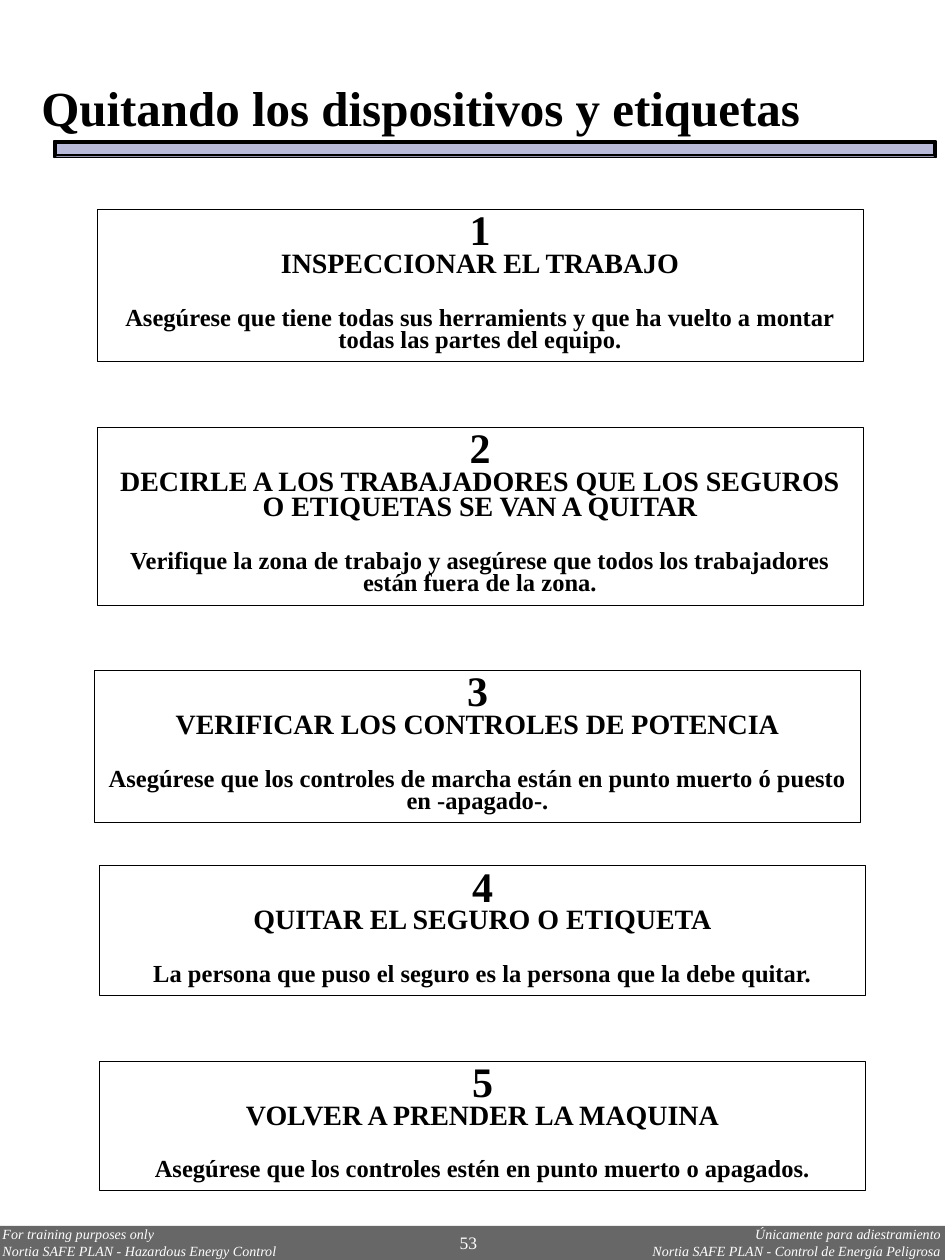
from dataclasses import dataclass

from pptx import Presentation
from pptx.dml.color import RGBColor
from pptx.enum.shapes import MSO_SHAPE
from pptx.enum.text import MSO_ANCHOR, PP_ALIGN
from pptx.util import Inches, Pt

RECTANGLE, BEVEL = MSO_SHAPE.RECTANGLE, MSO_SHAPE.BEVEL
LEFT, CENTER, RIGHT = PP_ALIGN.LEFT, PP_ALIGN.CENTER, PP_ALIGN.RIGHT
TOP = MSO_ANCHOR.TOP
COLUMNS, ROWS = 75, 100
BLANK_LAYOUT = 6


def color(hex_string):
    return RGBColor.from_string(hex_string)


@dataclass
class Page:
    """Style and current slide; lengths are columns and rows of the grid."""
    slide: object
    width: int
    height: int
    font: str = "Times New Roman"
    ink: str = "000000"
    paper: str = "FFFFFF"
    band: str = "676767"
    accent: str = "B9B9D9"

    def place(self, left, top, width, height):
        column, row = self.width / COLUMNS, self.height / ROWS
        return [round(n) for n in (left * column, top * row, width * column, height * row)]

    def set_line(self, paragraph, text, size, ink, align=LEFT, bold=False, italic=False):
        paragraph.text = text
        paragraph.alignment = align
        for run in paragraph.runs:
            font = run.font
            font.name, font.size = self.font, Pt(size)
            font.bold, font.italic = bold, italic
            font.color.rgb = color(ink)

    def shape(self, kind, area, fill=None, line=None):
        shape = self.slide.shapes.add_shape(kind, *self.place(*area))
        shape.shadow.inherit = False
        if fill:
            shape.fill.solid()
            shape.fill.fore_color.rgb = color(fill)
        else:
            shape.fill.background()
        if line:
            shape.line.color.rgb = color(self.ink)
            shape.line.width = Pt(line)
        else:
            shape.line.fill.background()
        return shape

    def text(self, area, lines, size, ink, inset=True, **style):
        frame = self.slide.shapes.add_textbox(*self.place(*area)).text_frame
        frame.word_wrap = True
        if not inset:
            frame.margin_left = frame.margin_right = 0
            frame.margin_top = frame.margin_bottom = 0
        frame.text = "\n".join(lines)
        for paragraph, line in zip(frame.paragraphs, lines):
            self.set_line(paragraph, line, size, ink, **style)
        return frame

    def step(self, area, number, heading, advice):
        frame = self.shape(RECTANGLE, area, line=0.25).text_frame
        frame.word_wrap = True
        frame.vertical_anchor = TOP
        lines = ((str(number), 24), (heading, 16), (advice, 14))
        frame.text = "\n".join(line for line, _ in lines)
        for paragraph, (line, size) in zip(frame.paragraphs, lines):
            self.set_line(paragraph, line, size, self.ink, CENTER, bold=True)
            paragraph.line_spacing = 0.75
        paragraph.space_before = Pt(17.25)


# Left, top and height of each step, then its heading and advice
STEPS = [
    (7.7, 16.6, 12.1, "INSPECCIONAR EL TRABAJO",
     "Asegúrese que tiene todas sus herramients y que ha vuelto a montar "
     "todas las partes del equipo."),
    (7.7, 33.9, 14.1, "DECIRLE A LOS TRABAJADORES QUE LOS SEGUROS O ETIQUETAS SE VAN A QUITAR",
     "Verifique la zona de trabajo y asegúrese que todos los trabajadores "
     "están fuera de la zona."),
    (7.5, 53.2, 12.1, "VERIFICAR LOS CONTROLES DE POTENCIA",
     "Asegúrese que los controles de marcha están en punto muerto ó puesto "
     "en -apagado-."),
    (7.9, 68.7, 10.3, "QUITAR EL SEGURO O ETIQUETA",
     "La persona que puso el seguro es la persona que la debe quitar."),
    (7.9, 84.2, 10.3, "VOLVER A PRENDER LA MAQUINA",
     "Asegúrese que los controles estén en punto muerto o apagados."),
]
STEP_WIDTH = 60.8
FOOTER_TOP, FOOTER_HEIGHT = 97.3, 2.7


def main():
    deck = Presentation()
    deck.slide_width, deck.slide_height = Inches(7.5), Inches(10)
    slide = deck.slides.add_slide(deck.slide_layouts[BLANK_LAYOUT])
    page = Page(slide, deck.slide_width, deck.slide_height)

    # Footer band with the course name in both languages and the page number
    page.shape(RECTANGLE, (0, FOOTER_TOP, COLUMNS, FOOTER_HEIGHT), fill=page.band)
    page.text((40.7, FOOTER_TOP, 34, FOOTER_HEIGHT),
              ["Únicamente para adiestramiento",
               "Nortia SAFE PLAN - Control de Energía Peligrosa"],
              8, page.paper, inset=False, align=RIGHT, italic=True)
    page.text((0.2, FOOTER_TOP, 33.4, FOOTER_HEIGHT),
              ["For training purposes only",
               "Nortia SAFE PLAN - Hazardous Energy Control"],
              8, page.paper, inset=False, italic=True)
    page.text((35.5, FOOTER_TOP, 5.5, FOOTER_HEIGHT), ["53"], 10, page.paper)

    # Numbered steps
    for number, (left, top, height, heading, advice) in enumerate(STEPS, 1):
        page.step((left, top, STEP_WIDTH, height), number, heading, advice)

    # Title and the bevelled rule under it
    title = page.text((2.3, 5.7, 71, 5.7), ["Quitando los dispositivos y etiquetas"],
                      28, page.ink, bold=True)
    title.paragraphs[0].space_before = Pt(4)
    rule = page.shape(BEVEL, (4.3, 11.2, 70, 1.3), fill=page.accent, line=1)
    rule.adjustments[0] = 0.125

    deck.save("out.pptx")


if __name__ == "__main__":
    main()
